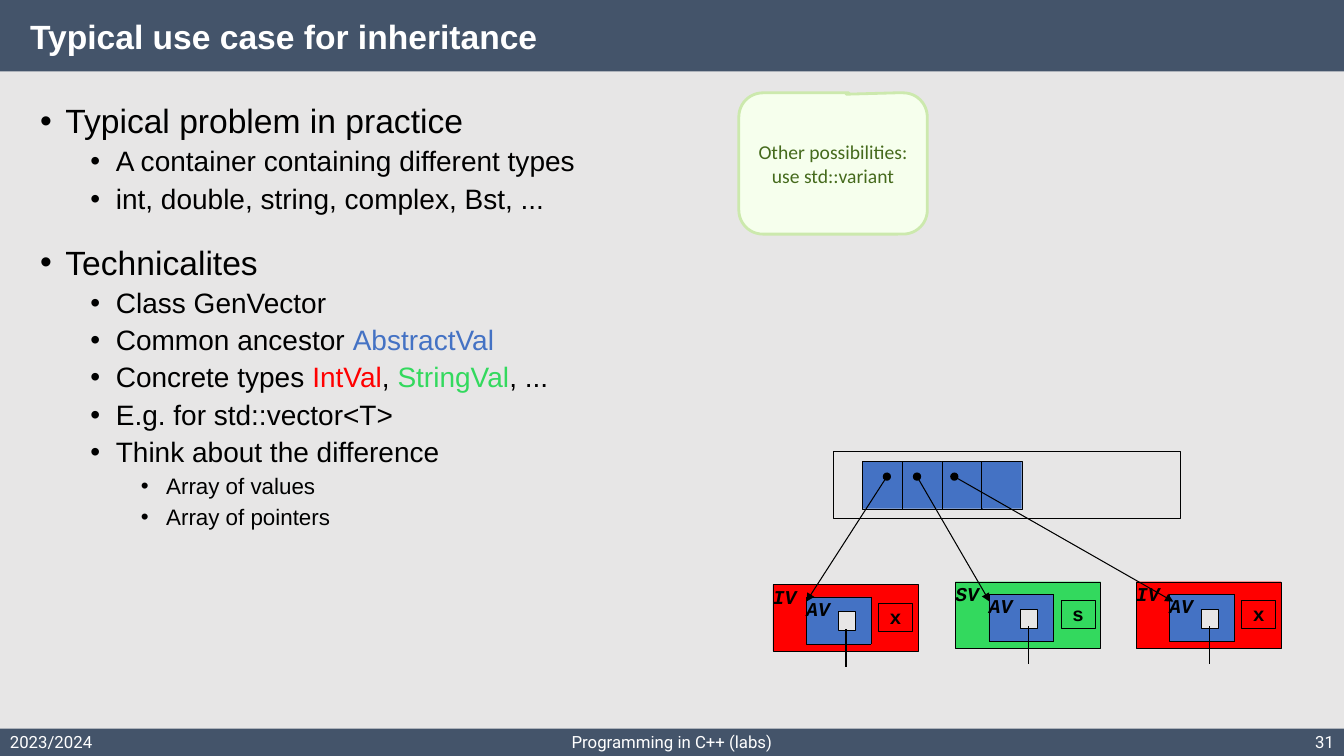
from lxml.etree import SubElement as Sub
from pptx import Presentation
from pptx.dml.color import RGBColor
from pptx.enum.dml import MSO_LINE as Dash
from pptx.enum.shapes import MSO_CONNECTOR as Conn, MSO_SHAPE as Kind
from pptx.enum.text import MSO_ANCHOR as Anchor, MSO_AUTO_SIZE as Auto, PP_ALIGN as Align
from pptx.oxml.ns import qn
from pptx.util import Cm, Pt

# Content
NAVY, GREY, BLACK, WHITE = "44546A", "E7E6E6", "000000", "FFFFFF"
BLUE, RED, GREEN = "4472C4", "FF0000", "33D95E"
WIDE, HIGH = 33.87, 19.05

TITLE = "Typical use case for inheritance"
FOOT = [  # text, left, width, alignment
    ("2023/2024", 0, 7.62, Align.LEFT),
    ("Programming in C++ (labs)", 11.22, 11.43, Align.CENTER),
    ("31", 26.25, 7.62, Align.RIGHT),
]
BODY = [  # level, runs as (text, colour)
    (0, [("Typical problem in practice", BLACK)]),
    (1, [("A container containing different types", BLACK)]),
    (1, [("int, double, string, complex, Bst, ...", BLACK)]),
    (0, [("Technicalites", BLACK)]),
    (1, [("Class GenVector", BLACK)]),
    (1, [("Common ancestor ", BLACK), ("AbstractVal", BLUE)]),
    (1, [("Concrete types ", BLACK), ("IntVal", RED), (", ", BLACK),
         ("StringVal", GREEN), (", ...", BLACK)]),
    (1, [("E.g. for std::vector<T>", BLACK)]),
    (1, [("Think about the difference", BLACK)]),
    (2, [("Array of values", BLACK)]),
    (2, [("Array of pointers", BLACK)]),
]
SIZES, GAPS = (24, 20, 16), (22, 5, 5)  # by level, in points
NOTE = ["Other possibilities:", "use std::variant"]
VALS = [  # name, member, fill, left, top
    ("IV", "x", RED, 19.48, 14.73),
    ("SV", "s", GREEN, 24.08, 14.66),
    ("IV", "x", RED, 28.63, 14.66),
]
LINKS = [(22.35, 20.32), (23.11, 24.94), (24.05, 29.57)]  # x at start and end
LINK_TOP, LINK_END = 12.01, 15.16


# Helpers
def rgb(code):
    return RGBColor.from_string(code)


def write(shape, paras, size=14, font="Arial", color=BLACK, bold=False,
          ital=False, align=Align.LEFT, anchor=Anchor.TOP, pad=None):
    """Each paragraph is a string or a list of (text, colour) runs."""
    frame = shape.text_frame
    frame.word_wrap, frame.auto_size = True, Auto.NONE
    frame.vertical_anchor = anchor
    if pad:
        (frame.margin_left, frame.margin_top,
         frame.margin_right, frame.margin_bottom) = map(Cm, pad)
    for i, runs in enumerate(paras):
        para = frame.paragraphs[0] if i == 0 else frame.add_paragraph()
        para.alignment = align
        for text, tint in [(runs, color)] if isinstance(runs, str) else runs:
            run = para.add_run()
            run.text = text
            face = run.font
            face.size, face.name = Pt(size), font
            face.bold, face.italic = bold, ital
            face.color.rgb = rgb(tint)
    return frame.paragraphs


def draw(where, x, y, w, h, fill=None, line=BLACK, weight=0.25, dash=None,
         kind=Kind.RECTANGLE):
    shape = where.add_shape(kind, Cm(x), Cm(y), Cm(w), Cm(h))
    shape.shadow.inherit = False
    if fill:
        shape.fill.solid()
        shape.fill.fore_color.rgb = rgb(fill)
    else:
        shape.fill.background()
    if line:
        shape.line.color.rgb = rgb(line)
        shape.line.width = Pt(weight)
        shape.line.dash_style = dash
    else:
        shape.line.fill.background()
    return shape


def link(where, x1, y1, x2, y2, arrow=False):
    wire = where.add_connector(Conn.STRAIGHT, Cm(x1), Cm(y1), Cm(x2), Cm(y2))
    wire.line.color.rgb = rgb(BLACK)
    wire.line.width = Pt(0.75)
    if arrow:
        ends = wire.line._get_or_add_ln()
        Sub(ends, qn("a:headEnd"), type="oval")
        Sub(ends, qn("a:tailEnd"), type="triangle")
    Sub(wire._element.spPr, qn("a:effectLst"))


def bullet(para, level):
    para.level = level
    para.line_spacing = 0.9
    para.space_before = Pt(GAPS[level])
    props = para._p.get_or_add_pPr()
    props.set("marL", str(Cm(0.64 + 1.27 * level)))
    props.set("indent", str(-Cm(0.64)))
    Sub(props, qn("a:buFont"), typeface="Arial")
    Sub(props, qn("a:buChar"), char="•")
    for run in para.runs:
        run.font.size = Pt(SIZES[level])


def value(where, name, member, fill, x, y):
    """One object: its outer box, base part, member and pointer."""
    parts = where.add_group_shape().shapes
    code = dict(font="Courier New", bold=True, pad=(0, 0, 0, 0))
    write(draw(parts, x, y, 3.66, 1.68, fill), [name], ital=True, **code)
    write(draw(parts, x + 2.66, y + 0.46, 0.86, 0.71), [member],
          align=Align.CENTER, anchor=Anchor.MIDDLE, **code)
    base = draw(parts, x + 0.84, y + 0.31, 1.63, 1.19, BLUE, dash=Dash.ROUND_DOT)
    write(base, ["AV"], ital=True, **code)
    draw(parts, x + 1.64, y + 0.69, 0.43, 0.48, GREY, weight=0.75)
    link(parts, x + 1.84, y + 1.12, x + 1.84, y + 2.08)


def main():
    deck = Presentation()
    deck.slide_width, deck.slide_height = Cm(WIDE), Cm(HIGH)
    slide = deck.slides.add_slide(deck.slide_layouts[5])
    slide.background.fill.solid()
    slide.background.fill.fore_color.rgb = rgb(GREY)
    shapes = slide.shapes

    # Title bar
    title = shapes.title
    title.left, title.top, title.width, title.height = map(Cm, (0, 0, WIDE, 1.8))
    title.fill.solid()
    title.fill.fore_color.rgb = rgb(NAVY)
    head = write(title, [TITLE], size=24, color=WHITE, bold=True,
                 pad=(0.76, 0.51, 0.25, 0.13))
    head[0].line_spacing = 0.9

    # Footer
    draw(shapes, 0, 18.36, WIDE, 0.69, NAVY, line=None)
    for text, x, w, align in FOOT:
        box = shapes.add_textbox(Cm(x), Cm(18.36), Cm(w), Cm(0.69))
        write(box, [text], size=12, font="Roboto", color=WHITE, align=align,
              anchor=Anchor.MIDDLE)

    # Bullet list
    box = shapes.add_textbox(Cm(0.76), Cm(2.51), Cm(32.08), Cm(15.09))
    paras = write(box, [runs for _, runs in BODY])
    for para, (level, _) in zip(paras, BODY):
        bullet(para, level)
    paras[0].space_before = Pt(0)

    # Vector with its cells
    draw(shapes, 21.01, 11.38, 8.74, 1.68)
    for i in range(4):
        draw(shapes, 21.74 + i, 11.63, 1.01, 1.19, BLUE, dash=Dash.ROUND_DOT)

    # Objects and the pointers to them
    for val in VALS:
        value(shapes, *val)
    for start, end in LINKS:
        link(shapes, start, LINK_TOP, end, LINK_END, arrow=True)

    # Callout
    note = draw(shapes, 18.62, 2.34, 4.75, 3.56, "F6FFED", "CCE9AD", 2,
                kind=Kind.ROUNDED_RECTANGULAR_CALLOUT)
    for i, adj in enumerate((0.07, -0.49, 0.17)):
        note.adjustments[i] = adj
    write(note, NOTE, font="Calibri", color="456A1C", align=Align.CENTER,
          anchor=Anchor.MIDDLE)

    deck.save("out.pptx")


if __name__ == "__main__":
    main()
